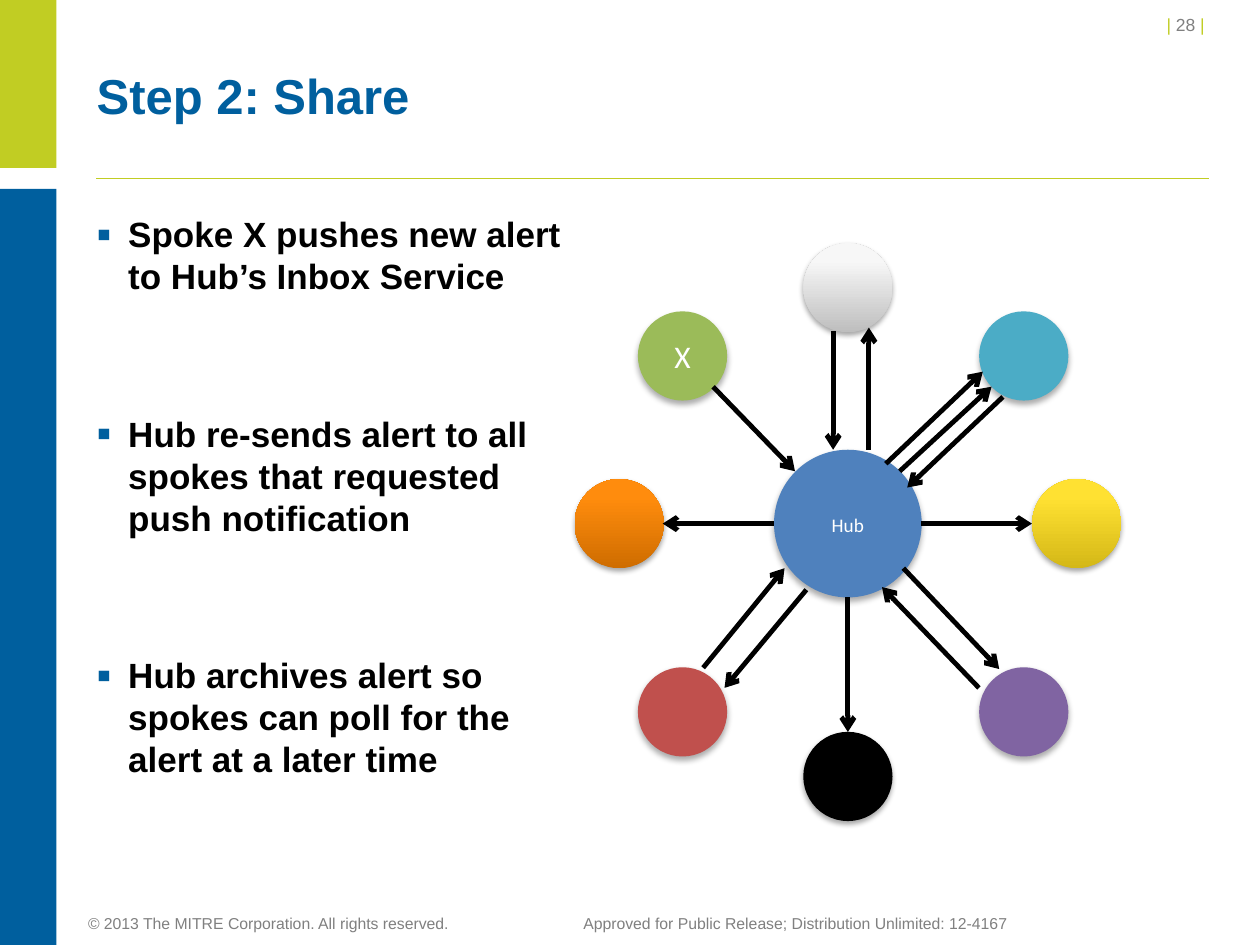
from dataclasses import dataclass
from typing import Any, Optional

import lxml.etree
import pptx
import pptx.dml.color
import pptx.enum.shapes
import pptx.enum.text
import pptx.oxml.ns
import pptx.util

Pt = pptx.util.Pt
Align = pptx.enum.text.PP_ALIGN
Anchor = pptx.enum.text.MSO_ANCHOR
Shape = pptx.enum.shapes.MSO_SHAPE

COLORS = {
    "lime": "C1CD23", "navy": "005F9E", "gray": "808080", "black": "000000",
    "white": "FFFFFF", "hub": "4F81BD", "green": "9BBB59", "purple": "8064A2",
    "red": "C0504D", "teal": "4BACC6", "orange": "FF8C0D",
    "orange_dark": "CF6D00", "yellow": "FFE132", "yellow_dark": "D4B817",
    "silver": "F7F7F7", "silver_dark": "BEBEBE",
}


@dataclass(frozen=True)
class Shadow:
    opacity: int
    blur: float
    distance: float


SOFT = Shadow(32, 3.5, 2.2)
TIGHT = Shadow(35, 3.1, 1.8)


@dataclass(frozen=True)
class Node:
    x: float
    y: float
    color: str
    shadow: Shadow = SOFT
    dark: Optional[str] = None
    diameter: float = 51
    label: str = ""
    label_size: float = 18
    line_spacing: Optional[float] = None
    space_after: float = 0


@dataclass(frozen=True)
class Message:
    x1: float
    y1: float
    x2: float
    y2: float


LEFT, RIGHT, TOP, BOTTOM = 390, 585, 203.4, 406.8
HUB_X, HUB_Y = 484.5, 299.2

NODES = [
    Node(HUB_X, HUB_Y, "hub", diameter=84.4, label="Hub", label_size=11,
         line_spacing=1.15, space_after=10),
    Node(LEFT, TOP, "green", label="X"),
    Node(RIGHT, BOTTOM, "purple"),
    Node(LEFT, BOTTOM, "red"),
    Node(RIGHT, TOP, "teal"),
    Node(353.8, HUB_Y, "orange", TIGHT, "orange_dark"),
    Node(615.3, HUB_Y, "yellow", TIGHT, "yellow_dark"),
    Node(HUB_X, 164.4, "silver", TIGHT, "silver_dark"),
    Node(HUB_X, 443.7, "black", TIGHT),
]

MESSAGES = [
    Message(407.5, 221, 454.3, 269.3),
    Message(514.1, 269.3, 566.6, 221),
    Message(526.3, HUB_Y, 589.7, HUB_Y),
    Message(HUB_X, 341.3, HUB_X, 418.3),
    Message(442.1, HUB_Y, 378.7, HUB_Y),
    Message(476.1, 189.4, 476.1, 257),
    Message(496.5, 257, 496.5, 187.2),
    Message(401.8, 381.6, 448.3, 324.7),
    Message(460.8, 337, 414, 393.1),
    Message(559.4, 393.1, 504, 335.5),
    Message(516.2, 324.7, 571, 382.3),
    Message(506.2, 265, 561.6, 212.4),
    Message(573.1, 226.8, 518.4, 278.6),
]

POINTS = [
    "Spoke X pushes new alert to Hub’s Inbox Service",
    "Hub re-sends alert to all spokes that requested push notification",
    "Hub archives alert so spokes can poll for the alert at a later time",
]


def rgb(color: str) -> pptx.dml.color.RGBColor:
    return pptx.dml.color.RGBColor.from_string(COLORS[color])


def child(parent: Any, tag: str, **attributes: Any) -> Any:
    return lxml.etree.SubElement(parent, pptx.oxml.ns.qn(tag),
                                 {key: str(value) for key, value in attributes.items()})


def write(paragraph: Any, text: str, *, size: float, color: str,
          font: str = "Arial", bold: bool = False, align: Any = Align.LEFT,
          line_spacing: Any = None, space_after: float = 0) -> None:
    paragraph.alignment = align
    paragraph.line_spacing = line_spacing
    paragraph.space_after = Pt(space_after)
    run = paragraph.add_run()
    run.text = text
    run.font.name = font
    run.font.size = Pt(size)
    run.font.bold = bold
    run.font.color.rgb = rgb(color)


def add_frame(slide: Any, left: float, top: float, width: float, height: float,
              anchor: Any = Anchor.TOP) -> Any:
    frame = slide.shapes.add_textbox(Pt(left), Pt(top), Pt(width), Pt(height)).text_frame
    frame.word_wrap = True
    frame.vertical_anchor = anchor
    return frame


def add_band(slide: Any, top: float, height: float, color: str) -> None:
    band = slide.shapes.add_shape(Shape.RECTANGLE, 0, Pt(top), Pt(32.2), Pt(height))
    band.shadow.inherit = False
    band.fill.solid()
    band.fill.fore_color.rgb = rgb(color)
    band.line.fill.background()


def add_line(slide: Any, route: Message, color: str, width: float, arrow: bool) -> None:
    line = slide.shapes.add_connector(
        pptx.enum.shapes.MSO_CONNECTOR.STRAIGHT,
        Pt(route.x1), Pt(route.y1), Pt(route.x2), Pt(route.y2))
    line.line.width = Pt(width)
    line.line.color.rgb = rgb(color)
    properties = line._element.spPr
    if arrow:
        child(properties.find(pptx.oxml.ns.qn("a:ln")), "a:tailEnd", type="arrow")
    child(properties, "a:effectLst")


def add_node(slide: Any, node: Node) -> None:
    radius = node.diameter / 2
    circle = slide.shapes.add_shape(Shape.OVAL, Pt(node.x - radius), Pt(node.y - radius),
                                    Pt(node.diameter), Pt(node.diameter))
    if node.dark:
        circle.fill.gradient()
        circle.fill.gradient_angle = 90
        stops = zip(circle.fill.gradient_stops, (0, 0.8), (node.dark, node.color))
        for stop, position, color in stops:
            stop.position = position
            stop.color.rgb = rgb(color)
    else:
        circle.fill.solid()
        circle.fill.fore_color.rgb = rgb(node.color)
    circle.line.fill.background()
    circle.shadow.inherit = False
    effects = circle._element.spPr.find(pptx.oxml.ns.qn("a:effectLst"))
    shadow = child(effects, "a:outerShdw", blurRad=int(Pt(node.shadow.blur)),
                   dist=int(Pt(node.shadow.distance)), dir=5400000, rotWithShape=0)
    shade = child(shadow, "a:srgbClr", val=COLORS["black"])
    child(shade, "a:alpha", val=node.shadow.opacity * 1000)
    if node.label:
        circle.text_frame.vertical_anchor = Anchor.MIDDLE
        write(circle.text_frame.paragraphs[0], node.label, size=node.label_size,
              color="white", font="Calibri", align=Align.CENTER,
              line_spacing=node.line_spacing, space_after=node.space_after)


def add_bullet(paragraph: Any) -> None:
    properties = paragraph._p.get_or_add_pPr()
    properties.set("marL", str(int(Pt(18))))
    properties.set("indent", str(int(Pt(-18))))
    child(child(properties, "a:buClr"), "a:srgbClr", val=COLORS["navy"])
    child(properties, "a:buSzPct", val=120000)
    child(properties, "a:buFont", typeface="Arial")
    child(properties, "a:buChar", char="▪")


def main() -> None:
    deck = pptx.Presentation()
    deck.slide_width, deck.slide_height = Pt(720), Pt(540)
    slide = deck.slides.add_slide(deck.slide_layouts[6])

    add_band(slide, 0, 96, "lime")
    add_band(slide, 108, 432, "navy")
    add_line(slide, Message(55, 102, 691, 102), "lime", 1, arrow=False)

    footer = add_frame(slide, 43.2, 514.8, 545.8, 21.6, Anchor.BOTTOM).paragraphs[0]
    tabs = child(footer._p.get_or_add_pPr(), "a:tabLst")
    child(tabs, "a:tab", pos=int(Pt(283)), algn="l")
    write(footer, "© 2013 The MITRE Corporation. All rights reserved.\t"
          "Approved for Public Release; Distribution Unlimited: 12-4167",
          size=9, color="gray", line_spacing=Pt(13))

    body = add_frame(slide, 48.2, 118.1, 291.6, 356.4)
    for index, point in enumerate(POINTS):
        paragraph = body.add_paragraph() if index else body.paragraphs[0]
        add_bullet(paragraph)
        write(paragraph, point, size=20, color="black", bold=True, line_spacing=Pt(24),
              space_after=66 if index < len(POINTS) - 1 else 6)

    page = add_frame(slide, 656.6, 5.8, 38.9, 14.4, Anchor.BOTTOM)
    page.margin_top = page.margin_bottom = 0
    page.word_wrap = False
    for text, color in (("| ", "lime"), ("28 ", "gray"), ("|", "lime")):
        write(page.paragraphs[0], text, size=10, color=color, align=Align.RIGHT)

    title = add_frame(slide, 48.2, 18, 648, 74.2, Anchor.MIDDLE)
    write(title.paragraphs[0], "Step 2: Share", size=28, color="navy", bold=True,
          line_spacing=Pt(32))

    for node in NODES:
        add_node(slide, node)
    for message in MESSAGES:
        add_line(slide, message, "black", 2.75, arrow=True)

    deck.save("out.pptx")


if __name__ == "__main__":
    main()
